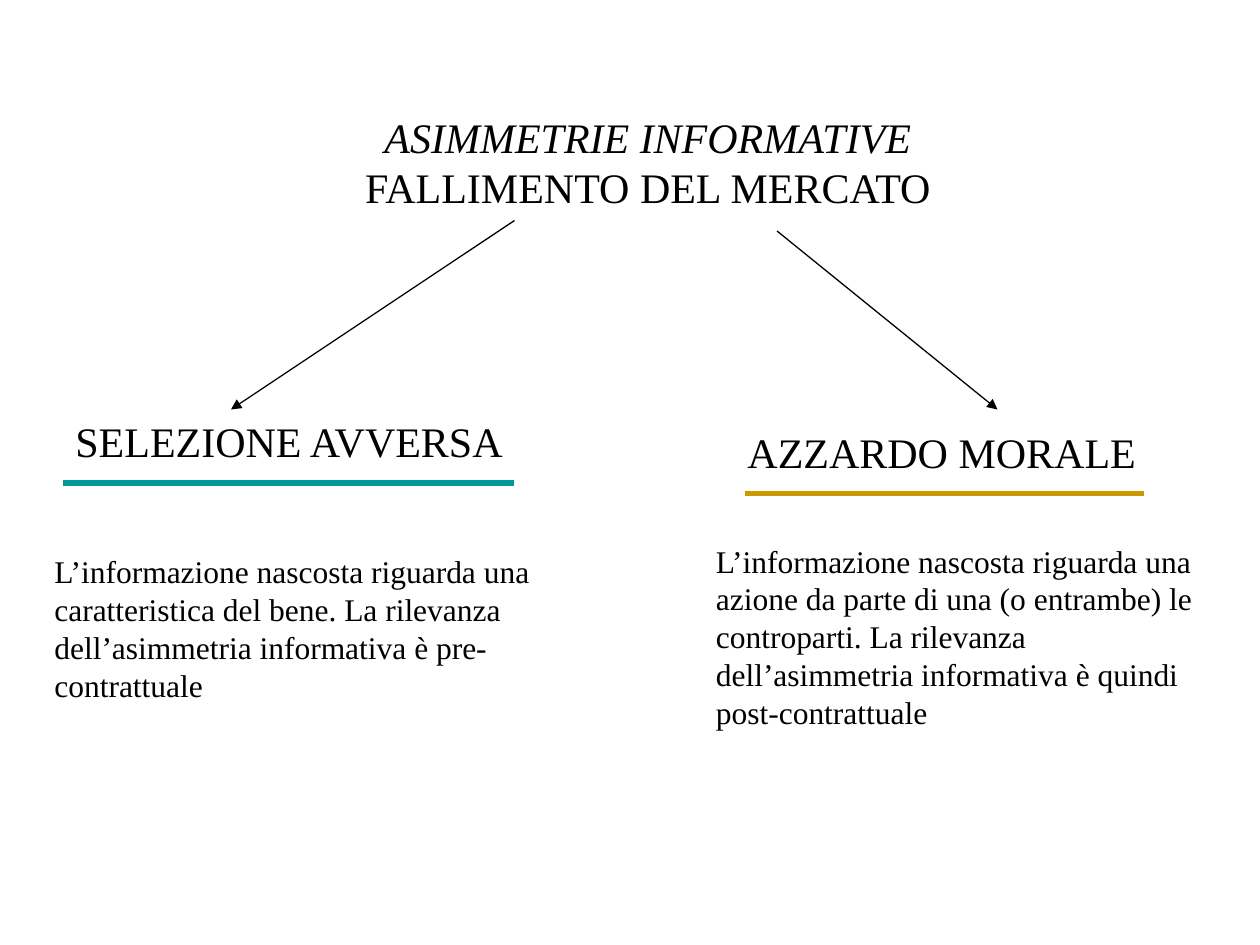
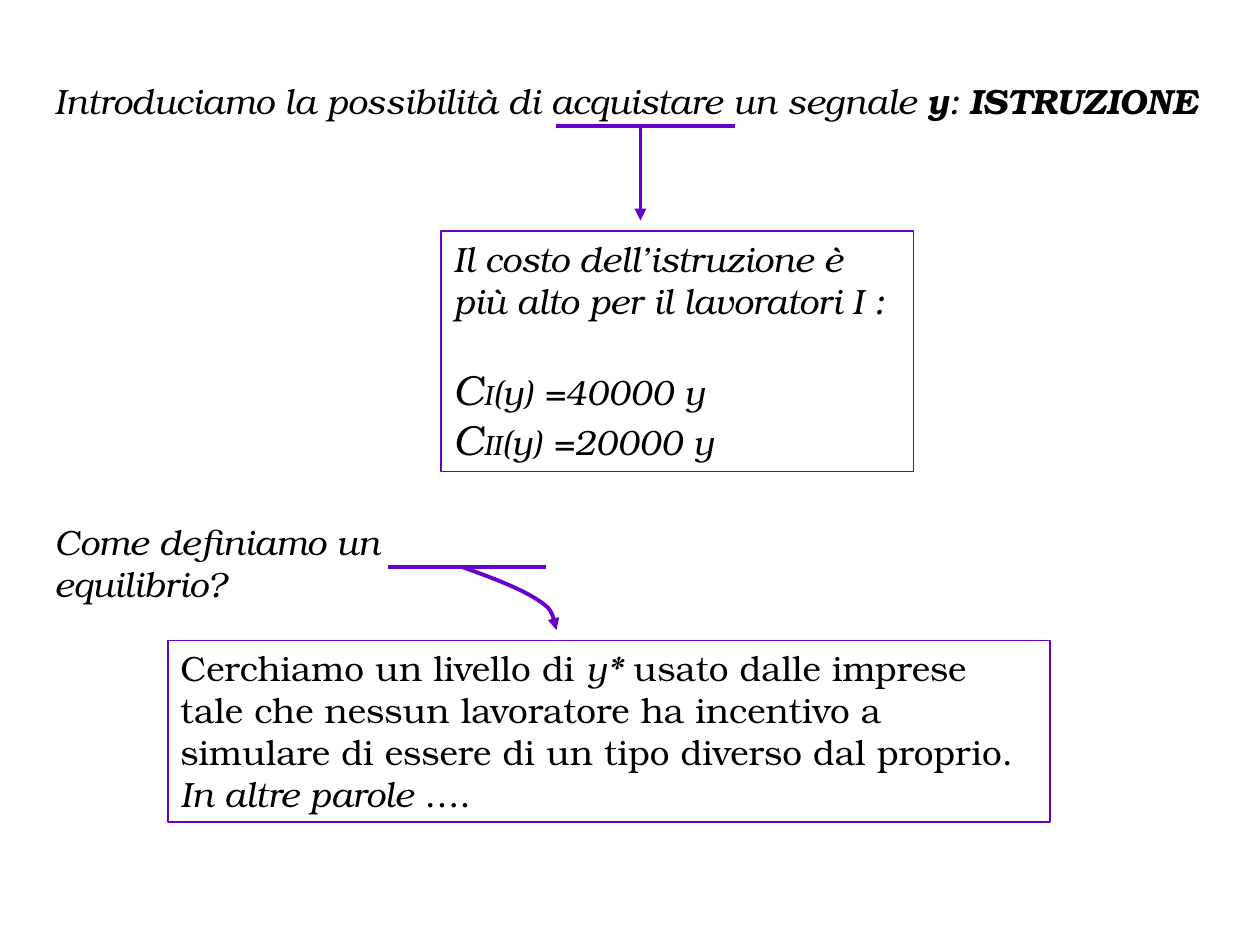
from pptx import Presentation
from pptx.dml.color import RGBColor as Rgb
from pptx.enum.shapes import MSO_CONNECTOR as Conn, MSO_SHAPE as Kind
from pptx.enum.text import MSO_ANCHOR as Anchor, PP_ALIGN as Align
from pptx.oxml.ns import qn
from pptx.oxml.xmlchemy import OxmlElement as Node
from pptx.util import Inches, Pt

# Shared style; all places are in cells of a 120 x 90 grid
HEX = {"ink": "000000", "teal": "009999", "gold": "CC9900", "violet": "6600CC"}
SERIF, BOOK = "Times New Roman", "TeX Gyre Bonum"
COLS, ROWS = 120, 90
CELL = Inches(10) / COLS

# Slide 1: a paragraph is a list of runs (text, format)
HEAD = [[("ASIMMETRIE INFORMATIVE", {"i": True})], [("FALLIMENTO DEL MERCATO", {})]]
CASES = [
    {"name": "SELEZIONE AVVERSA", "at": (6, 39, 44, 6),
     "rule": (6, 46, 49, 46), "tint": "teal", "arrow": (49, 21, 22, 39),
     "body": "L’informazione nascosta riguarda una caratteristica del bene. "
             "La rilevanza dell’asimmetria informativa è pre-contrattuale",
     "spot": (4, 52, 48, 15.6)},
    {"name": "AZZARDO MORALE", "at": (70, 40, 39.5, 6),
     "rule": (71, 47, 109, 47), "tint": "gold", "arrow": (74, 22, 95, 39),
     "body": "L’informazione nascosta riguarda una azione da parte di una "
             "(o entrambe) le controparti. La rilevanza dell’asimmetria "
             "informativa è quindi post-contrattuale",
     "spot": (67, 51, 48, 19.2)},
]

# Slide 2
SIGNAL = [[("Introduciamo la possibilità di acquistare un segnale ", {}),
           ("y", {"b": True}), (": ", {}), ("ISTRUZIONE", {"b": True})]]
COST = [[("Il costo dell’istruzione è più alto per il lavoratori I :", {})]] + [
    [("C", {"size": 24}), (kind, {"size": 16}), (f"(y) ={cost} y", {})]
    for kind, cost in (("I", 40000), ("II", 20000))]
ASK = [[("Come definiamo un equilibrio?", {})]]
GOAL = [[("Cerchiamo un livello di ", {}), ("y*", {"i": True}),
         (" usato dalle imprese tale che nessun lavoratore ha incentivo a "
          "simulare di essere di un tipo diverso dal proprio. ", {}),
         ("In altre parole", {"i": True}), (" ….", {})]]
RULES = [(53, 12, 70, 12), (37, 54, 52, 54)]
DROP = (61, 12, 61, 21)
# Start point, then three points for each Bezier piece
BEND = [(44, 54), (46.8, 55), (49.4, 56), (51, 57), (52.6, 58), (52.8, 59), (53, 60)]


def grid(*cells):
    return [round(c * CELL) for c in cells]


def write(slide, paras, at, size=20, font=BOOK, i=False, wrap=True,
          align=Align.LEFT, edge=None, gaps=()):
    """Put text in a plain box, or in an outlined one when edge is given."""
    if edge:
        box = slide.shapes.add_shape(Kind.RECTANGLE, *grid(*at))
        box.shadow.inherit = False
        box.fill.background()
        paint(box, edge, 0.75)
    else:
        box = slide.shapes.add_textbox(*grid(*at))
    frame = box.text_frame
    frame.word_wrap, frame.vertical_anchor = wrap, Anchor.TOP
    for n, runs in enumerate(paras):
        para = frame.add_paragraph() if n else frame.paragraphs[0]
        para.alignment = align
        if n in gaps:
            para.space_before = Pt(24)
        for text, style in runs:
            run = para.add_run()
            run.text = text
            look = run.font
            look.name, look.size = font, Pt(style.get("size", size))
            look.bold, look.italic = style.get("b", False), style.get("i", i)
            look.color.rgb = Rgb.from_string(HEX["ink"])


def paint(shape, tint, width, tip=False):
    shape.line.color.rgb = Rgb.from_string(HEX[tint])
    shape.line.width = Pt(width)
    if tip:
        end = Node("a:tailEnd")
        end.set("type", "triangle")
        shape.line._get_or_add_ln().append(end)


def draw(slide, ends, tint, width, tip=False):
    line = slide.shapes.add_connector(Conn.STRAIGHT, *grid(*ends))
    paint(line, tint, width, tip)
    line._element.spPr.append(Node("a:effectLst"))


def curve(slide, points, tint, width):
    first, *rest = [grid(*p) for p in points]
    build = slide.shapes.build_freeform(*first)
    build.add_line_segments(rest, close=False)
    shape = build.convert_to_shape()
    shape.shadow.inherit = False
    shape.fill.background()
    paint(shape, tint, width, tip=True)
    # Join each three straight pieces into one Bezier piece
    steps = list(shape._element.iter(qn("a:lnTo")))
    for n in range(0, len(steps), 3):
        bez = Node("a:cubicBezTo")
        steps[n].addprevious(bez)
        for step in steps[n:n + 3]:
            bez.append(step[0])
            step.getparent().remove(step)


def market(slide):
    write(slide, HEAD, (33, 10, 57.4, 10.8), 24, SERIF, wrap=False, align=Align.CENTER)
    for case in CASES:
        draw(slide, case["arrow"], "ink", 0.75, tip=True)
        write(slide, [[(case["name"], {})]], case["at"], 24, SERIF, wrap=False)
        draw(slide, case["rule"], case["tint"], 3)
        write(slide, [[(case["body"], {})]], case["spot"], 18, SERIF)


def signal(slide):
    write(slide, SIGNAL, (4, 7, 111.6, 5.2), i=True, wrap=False)
    for rule in RULES:
        draw(slide, rule, "violet", 2.25)
    draw(slide, DROP, "violet", 2.25, tip=True)
    write(slide, COST, (42, 22, 45, 22.9), i=True, edge="violet", gaps=(1,))
    write(slide, ASK, (4, 49, 48, 8.4), i=True)
    write(slide, GOAL, (16, 61, 84, 17.3), edge="violet")
    curve(slide, BEND, "violet", 2.25)


def main():
    deck = Presentation()
    deck.slide_width, deck.slide_height = grid(COLS, ROWS)
    for fill in (market, signal):
        fill(deck.slides.add_slide(deck.slide_layouts[6]))
    deck.save("out.pptx")


if __name__ == "__main__":
    main()
